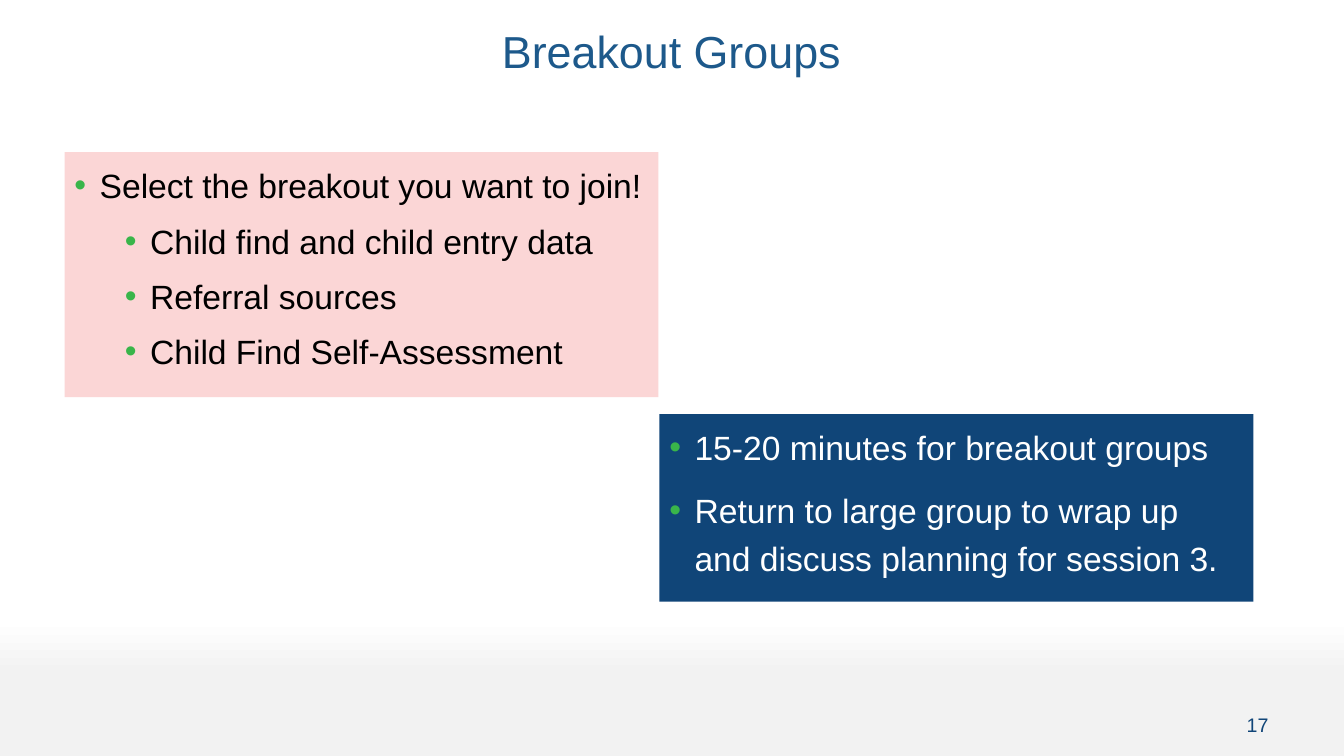
from lxml.etree import SubElement
from pptx import Presentation
from pptx.dml.color import RGBColor
from pptx.enum.shapes import MSO_SHAPE
from pptx.enum.text import MSO_ANCHOR, PP_ALIGN
from pptx.oxml.ns import qn
from pptx.util import Inches, Pt


def paint(color, code):
    color.rgb = RGBColor.from_string(code)


def style(para, size, code):
    for run in para.runs:
        run.font.name = "Arial"
        run.font.size = Pt(size)
        paint(run.font.color, code)


deck = Presentation()
deck.slide_width, deck.slide_height = Inches(13.33), Inches(7.5)
slide = deck.slides.add_slide(deck.slide_layouts[6])

back = slide.background.fill
back.gradient()
back.gradient_angle = 270
for stop, (place, code) in zip(back.gradient_stops, [(0.82, "FFFFFF"), (0.89, "F2F2F2")]):
    stop.position = place
    paint(stop.color, code)

left, wide = 0.64, 5.89
labels = [
    ("Breakout Groups", (left, 0.25, 12.04, 0.98), 32, "1D598B",
     PP_ALIGN.CENTER, MSO_ANCHOR.TOP, 0.9),
    ("17", (11.33, 6.91, 1.35, 0.55), 14, "104578",
     PP_ALIGN.RIGHT, MSO_ANCHOR.MIDDLE, 1.0),
]
for text, area, size, code, align, anchor, space in labels:
    frame = slide.shapes.add_textbox(*map(Inches, area)).text_frame
    frame.word_wrap = True
    frame.vertical_anchor = anchor
    frame.text = text
    para = frame.paragraphs[0]
    para.alignment = align
    para.line_spacing = space
    style(para, size, code)

panels = [
    (left, 1.51, 2.43, "FBD6D6", "000000", [
        (0, "Select the breakout you want to join!"),
        (1, "Child find and child entry data"),
        (1, "Referral sources"),
        (1, "Child Find Self-Assessment"),
    ]),
    (left + wide + 0.01, 4.11, 1.86, "104578", "FFFFFF", [
        (0, "15-20 minutes for breakout groups"),
        (0, "Return to large group to wrap up and discuss planning for session 3."),
    ]),
]
for x, y, high, fill, ink, items in panels:
    box = slide.shapes.add_shape(
        MSO_SHAPE.RECTANGLE, Inches(x), Inches(y), Inches(wide), Inches(high))
    box.shadow.inherit = False
    box.fill.solid()
    paint(box.fill.fore_color, fill)
    box.line.fill.background()
    frame = box.text_frame
    frame.word_wrap = True
    frame.vertical_anchor = MSO_ANCHOR.TOP
    frame.text = "\n".join(text for level, text in items)
    for row, (para, (level, text)) in enumerate(zip(frame.paragraphs, items)):
        para.level = level
        para.alignment = PP_ALIGN.LEFT
        para.line_spacing = 1.2
        para.space_before = Pt((10 - 5 * level) if row else 0)
        props = para._p.get_or_add_pPr()
        props.set("marL", str(Inches(0.25 + 0.5 * level)))
        props.set("indent", str(Inches(-0.25)))
        tint = SubElement(props, qn("a:buClr"))
        SubElement(tint, qn("a:srgbClr"), val="39B54A")
        SubElement(props, qn("a:buFont"), typeface="Arial")
        SubElement(props, qn("a:buChar"), char="•")
        style(para, 24, ink)

deck.save("out.pptx")
